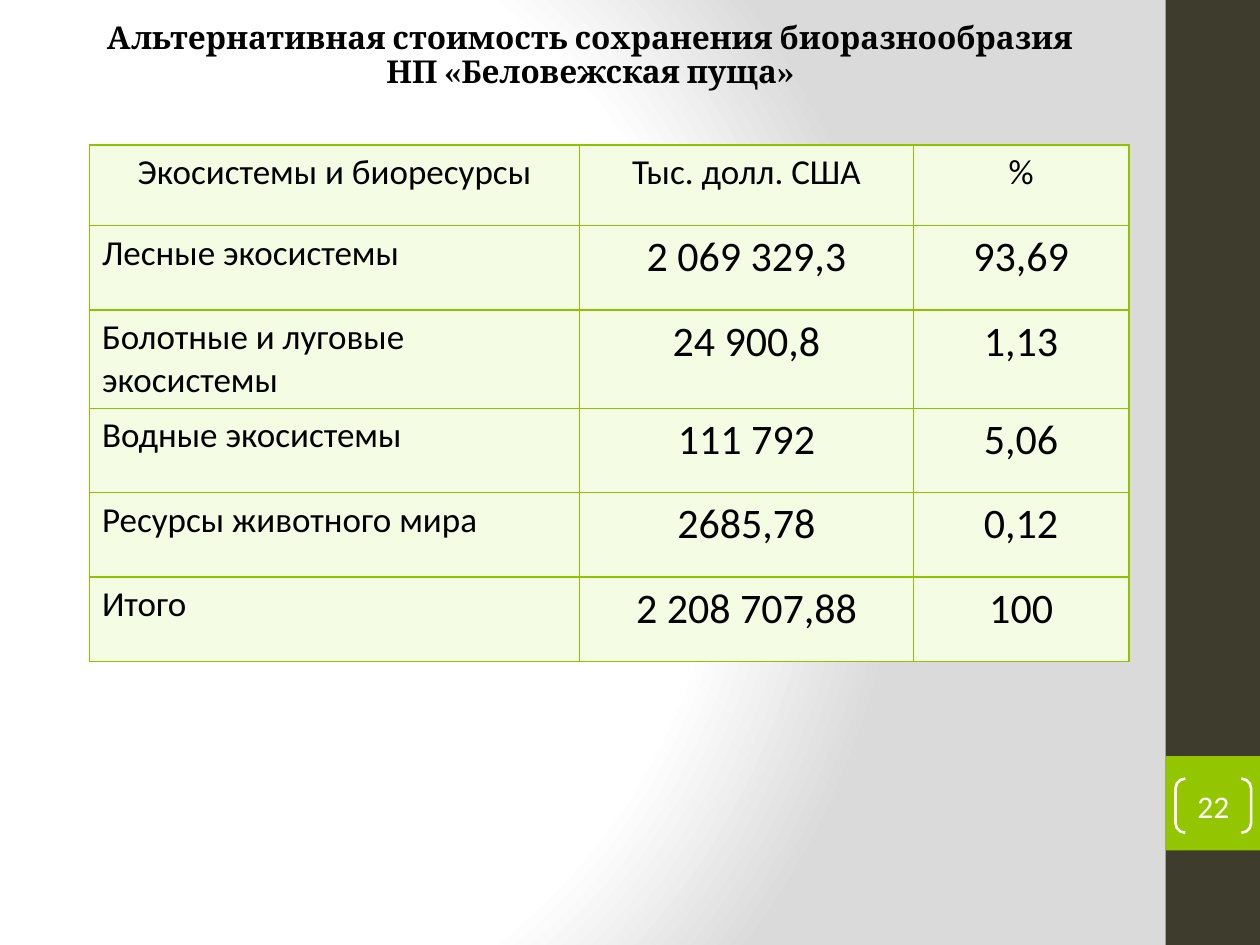
from pptx import Presentation
from pptx.dml.color import RGBColor
from pptx.enum.shapes import MSO_SHAPE as Shape
from pptx.enum.text import MSO_ANCHOR as Anchor, PP_ALIGN as Align
from pptx.oxml import parse_xml
from pptx.oxml.ns import nsdecls, qn
from pptx.util import Inches, Pt

TITLE = "Альтернативная стоимость сохранения биоразнообразия\vНП «Беловежская пуща»"
ROWS = [
    ("Экосистемы и биоресурсы", "Тыс. долл. США", "%"),
    ("Лесные экосистемы", "2 069 329,3", "93,69"),
    ("Болотные и луговые экосистемы", "24 900,8", "1,13"),
    ("Водные экосистемы", "111 792", "5,06"),
    ("Ресурсы животного мира", "2685,78", "0,12"),
    ("Итого", "2 208 707,88", "100"),
]
WIDTHS = [3.89, 2.65, 1.71]
HEIGHTS = [0.64, 0.67, 0.77, 0.67, 0.67, 0.67]
STOPS = [(0, "FFFFFF"), (75, "FFFFFF"), (100, "DADADA")]
BLACK, WHITE, DARK, LIME = "000000", "FFFFFF", "3E3D2D", "94C600"
PALE, GRID = "F4FCE4", "91C200"


def rgb(code):
    return RGBColor.from_string(code)


def place(shape, *box):
    shape.left, shape.top, shape.width, shape.height = map(Inches, box)


def style(frame, size, name, color, align=Align.CENTER, bold=False):
    for para in frame.paragraphs:
        para.alignment = align
        for run in para.runs:
            font = run.font
            font.size, font.name, font.bold = Pt(size), name, bold
            font.color.rgb = rgb(color)


def add_block(slide, kind, box, fill=None):
    shape = slide.shapes.add_shape(kind, *map(Inches, box))
    shape.shadow.inherit = False
    if fill:
        shape.fill.solid()
        shape.fill.fore_color.rgb = rgb(fill)
        shape.line.fill.background()
    else:
        shape.fill.background()
    return shape


def paint_back(slide):
    """Give the slide a radial gradient background."""
    slide.background.fill.gradient()
    old = slide.element.find(".//" + qn("a:gradFill"))
    stops = "".join(
        f'<a:gs pos="{pos * 1000}"><a:srgbClr val="{color}"/></a:gs>'
        for pos, color in STOPS)
    new = parse_xml(
        f'<a:gradFill {nsdecls("a")} rotWithShape="1"><a:gsLst>{stops}</a:gsLst>'
        '<a:path path="circle"><a:fillToRect l="20000" t="50000" r="100000" '
        'b="50000"/></a:path></a:gradFill>')
    old.getparent().replace(old, new)


def add_borders(cell):
    props = cell._tc.get_or_add_tcPr()
    for i, side in enumerate("LRTB"):
        props.insert(i, parse_xml(
            f'<a:ln{side} {nsdecls("a")} w="12700"><a:solidFill>'
            f'<a:srgbClr val="{GRID}"/></a:solidFill></a:ln{side}>'))


def add_grid(slide):
    box = map(Inches, (0.71, 1.15, sum(WIDTHS), sum(HEIGHTS)))
    table = slide.shapes.add_table(len(ROWS), len(WIDTHS), *box).table
    for col, width in zip(table.columns, WIDTHS):
        col.width = Inches(width)
    for r, (row, height) in enumerate(zip(ROWS, HEIGHTS)):
        table.rows[r].height = Inches(height)
        for c, text in enumerate(row):
            cell = table.cell(r, c)
            cell.text_frame.text = text
            cell.fill.solid()
            cell.fill.fore_color.rgb = rgb(PALE)
            size = 24 if r and c else 20
            align = Align.LEFT if r and not c else Align.CENTER
            style(cell.text_frame, size, "Calibri", BLACK, align)
            add_borders(cell)


def add_title(slide):
    title = slide.shapes.title
    place(title, 0.28, 0.13, 8.81, 0.71)
    frame = title.text_frame
    frame.text = TITLE
    frame.word_wrap = True
    frame.vertical_anchor = Anchor.TOP
    frame.paragraphs[0].line_spacing = 0.9
    style(frame, 18, "Cambria", BLACK, bold=True)


def add_number(slide):
    mark = add_block(slide, Shape.DOUBLE_BRACKET, (9.33, 6.18, 0.6, 0.43))
    mark.adjustments[0] = 0.18
    mark.line.color.rgb = rgb(WHITE)
    mark.line.width = Pt(1.5)
    frame = mark.text_frame
    frame.margin_left = frame.margin_right = 0
    frame.margin_top = frame.margin_bottom = 0
    frame.vertical_anchor = Anchor.MIDDLE
    frame.text = "22"
    style(frame, 18, "Calibri", WHITE)


def main():
    deck = Presentation()
    deck.slide_width, deck.slide_height = Inches(10), Inches(7.5)
    slide = deck.slides.add_slide(deck.slide_layouts[5])
    paint_back(slide)
    add_block(slide, Shape.RECTANGLE, (9.25, 0, 0.75, 7.5), DARK)
    add_block(slide, Shape.RECTANGLE, (9.25, 6, 0.75, 0.75), LIME)
    add_grid(slide)
    add_title(slide)
    add_number(slide)
    deck.save("out.pptx")


if __name__ == "__main__":
    main()
